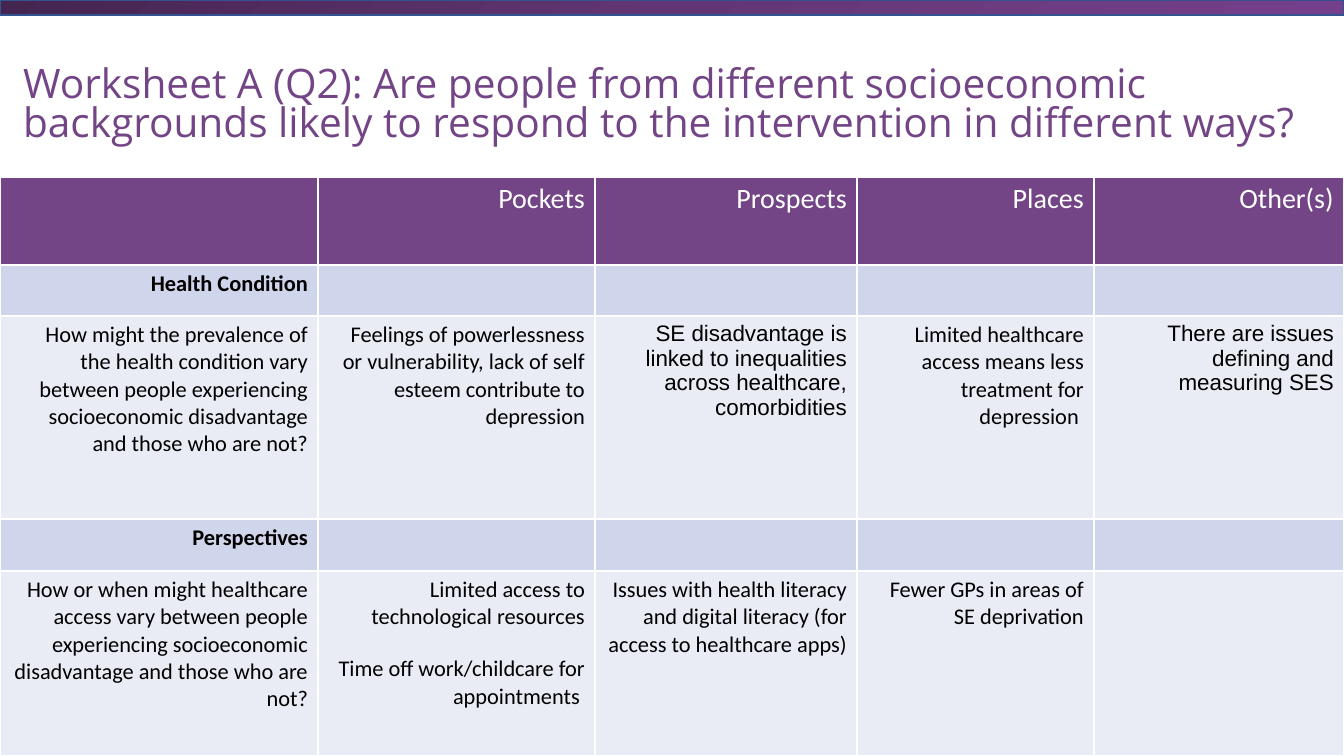
from copy import deepcopy

from pptx import Presentation
from pptx.dml.color import RGBColor
from pptx.enum.shapes import MSO_SHAPE
from pptx.enum.text import MSO_ANCHOR, PP_ALIGN
from pptx.oxml.ns import qn
from pptx.util import Pt

PX = 914400 / 100.8
COLORS = {
    "purple": "734586", "bar_dark": "442550", "bar_mid": "623674",
    "bar_light": "75408B", "bar_line": "32538F", "section": "CFD5EA",
    "answer": "E9EBF5", "black": "000000", "white": "FFFFFF",
}


def px(n):
    return round(n * PX)


def color(name):
    return RGBColor.from_string(COLORS[name])


prs = Presentation()
prs.slide_width, prs.slide_height = px(1344), px(756)
s = prs.slides.add_slide(prs.slide_layouts[5])

# Gradient bar along the top
bar = s.shapes.add_shape(MSO_SHAPE.RECTANGLE, 0, 0, px(1344), px(15))
bar.shadow.inherit = False
bar.fill.gradient()
stops = bar._element.find(".//" + qn("a:gsLst"))
stops.insert(1, deepcopy(stops[0]))
for stop, name, position in zip(bar.fill.gradient_stops,
                                ("bar_dark", "bar_mid", "bar_light"), (0, 0.5, 1)):
    stop.color.rgb = color(name)
    stop.position = position
bar.fill.gradient_angle = 315
bar.line.color.rgb = color("bar_line")
bar.line.width = Pt(1)

# Title
title = s.shapes.title
title.left, title.top, title.width, title.height = px(18), px(33), px(1306), px(146)
tf = title.text_frame
tf.text = ("Worksheet A (Q2): Are people from different socioeconomic "
           "backgrounds likely to respond to the intervention in different ways?")
tf.word_wrap = True
tf.vertical_anchor = MSO_ANCHOR.MIDDLE
tf.margin_left = tf.margin_right = tf.margin_top = tf.margin_bottom = px(5)
p = tf.paragraphs[0]
p.alignment = PP_ALIGN.LEFT
p.line_spacing = 0.81
font = p.runs[0].font
font.name, font.size = "Open Sans", Pt(29)
font.color.rgb = color("purple")

# Worksheet table: (row height, fill, text size, text colour, bold, cell texts)
col_widths = [318, 277, 262, 237, 250]
rows = [
    (88, "purple", 20, "white", False,
     ["", "Pockets", "Prospects", "Places", "Other(s)"]),
    (51, "section", 16, "black", True, ["Health Condition", "", "", "", ""]),
    (203, "answer", 16, "black", False, [
        "How might the prevalence of the health condition vary between people "
        "experiencing socioeconomic disadvantage and those who are not?",
        "Feelings of powerlessness or vulnerability, lack of self esteem "
        "contribute to depression",
        "SE disadvantage is linked to inequalities across healthcare, comorbidities",
        "Limited healthcare access means less treatment for depression ",
        "There are issues defining and measuring SES"]),
    (52, "section", 16, "black", True, ["Perspectives", "", "", "", ""]),
    (185, "answer", 16, "black", False, [
        "How or when might healthcare access vary between people experiencing "
        "socioeconomic disadvantage and those who are not?",
        "Limited access to technological resources\n"
        "Time off work/childcare for appointments ",
        "Issues with health literacy and digital literacy (for access to "
        "healthcare apps)",
        "Fewer GPs in areas of SE deprivation",
        ""]),
]
arial_cells = {(2, 2), (2, 4)}

table = s.shapes.add_table(len(rows), len(col_widths), 0, px(177),
                           px(1344), px(579)).table
for column, width in zip(table.columns, col_widths):
    column.width = px(width)
for i, (height, fill, size, text_color, bold, texts) in enumerate(rows):
    table.rows[i].height = px(height)
    for j, text in enumerate(texts):
        cell = table.cell(i, j)
        cell.fill.solid()
        cell.fill.fore_color.rgb = color(fill)
        cell.text_frame.text = text
        for n, p in enumerate(cell.text_frame.paragraphs):
            p.alignment = PP_ALIGN.RIGHT
            if n:
                p.space_before = Pt(17.6)
            for r in p.runs:
                r.font.name = "Arial" if (i, j) in arial_cells else "Calibri"
                r.font.size = Pt(size)
                r.font.bold = bold
                r.font.color.rgb = color(text_color)

prs.save("out.pptx")
